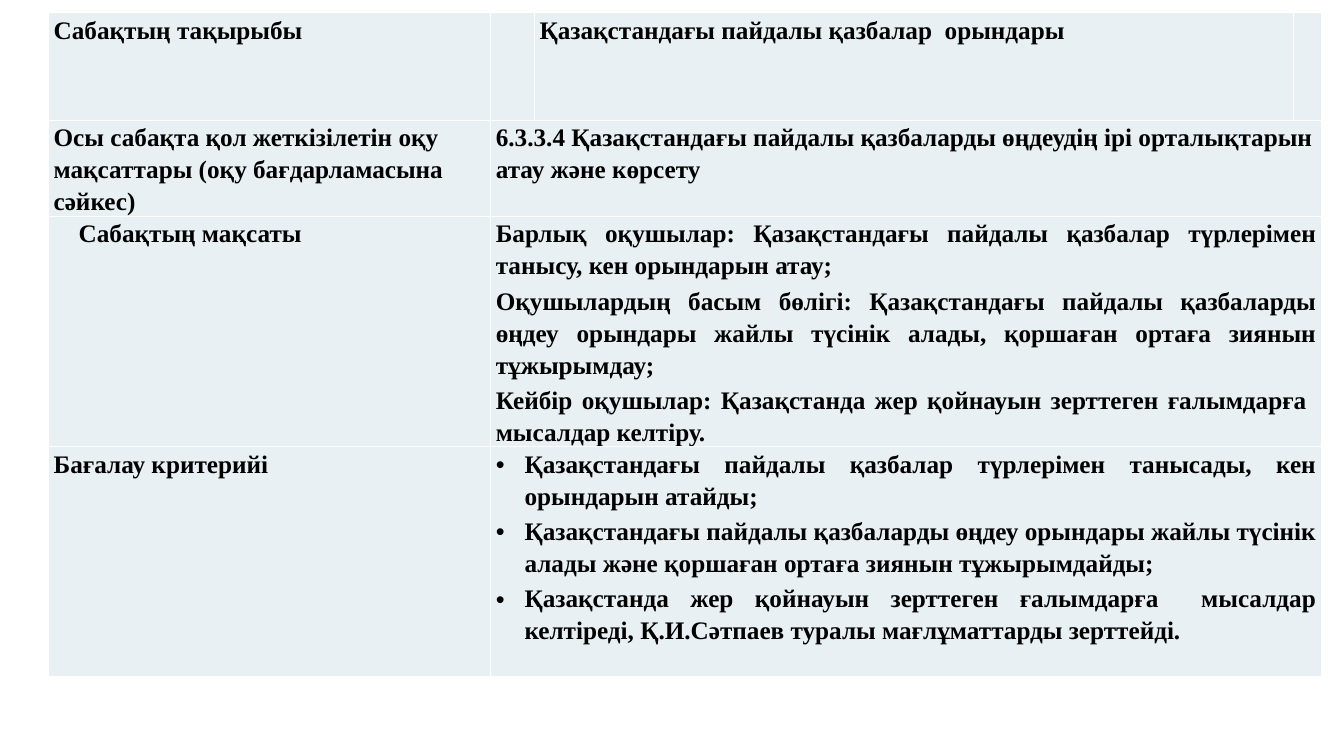
"""Builds a lesson plan slide with a four-row table of topic, goals and criteria."""
from lxml import etree
from pptx import Presentation
from pptx import util as u
from pptx.dml.color import RGBColor
from pptx.enum import text
from pptx.oxml.ns import qn


def color(fmt, value):
    fmt.solid()
    fmt.fore_color.rgb = RGBColor.from_string(value)


def write(cell, lines, before, align, margin, indent, bullet):
    tf = cell.text_frame
    for i, line in enumerate(lines):
        p = tf.add_paragraph() if i else tf.paragraphs[0]
        for name, value in {"alignment": align, "line_spacing": 1.15,
                            "space_before": u.Pt(before)}.items():
            setattr(p, name, value)
        pPr = p._p.get_or_add_pPr()
        pPr.set("marL", str(u.Inches(margin)))
        pPr.set("indent", str(u.Inches(indent)))
        if bullet:
            etree.SubElement(pPr, qn("a:buFont"), typeface="Arial")
            etree.SubElement(pPr, qn("a:buChar"), char="•")
        r = p.add_run()
        r.text = line
        for name, value in {"name": "Times New Roman", "size": u.Pt(24), "bold": True}.items():
            setattr(r.font, name, value)
        color(r.font.fill, "000000")


prs = Presentation()
prs.slide_width, prs.slide_height = u.Inches(17.78), u.Inches(10)
col, row = prs.slide_width / 100, prs.slide_height / 100
s = prs.slides.add_slide(prs.slide_layouts[6])

widths = [32.9, 3.26, 56.47, 2.08]
heights = [14.2, 12.7, 30.5, 30.4]
tbl = s.shapes.add_table(len(heights), len(widths), int(3.6 * col), int(1.7 * row),
                         int(sum(widths) * col), int(sum(heights) * row)).table
for c, width in zip(tbl.columns, widths):
    c.width = int(width * col)
for r, height in zip(tbl.rows, heights):
    r.height = int(height * row)
for i in range(1, len(heights)):
    tbl.cell(i, 1).merge(tbl.cell(i, 3))

for cell in tbl.iter_cells():
    for name, value in {"margin_left": 0.07, "margin_right": 0.07,
                        "margin_top": 0, "margin_bottom": 0}.items():
        setattr(cell, name, u.Inches(value))
    tcPr = cell._tc.get_or_add_tcPr()
    for side in ("lnL", "lnR", "lnT", "lnB"):
        ln = etree.SubElement(tcPr, qn("a:" + side), w=str(u.Pt(1)))
        etree.SubElement(etree.SubElement(ln, qn("a:solidFill")), qn("a:srgbClr"), val="FFFFFF")
    color(cell.fill, "E8F0F4")

left, just = text.PP_ALIGN.LEFT, text.PP_ALIGN.JUSTIFY
contents = [
    (0, 0, ["Сабақтың тақырыбы"], 0, left, 0, 0, False),
    (0, 2, ["Қазақстандағы пайдалы қазбалар  орындары"], 6, left, 0, 0, False),
    (1, 0, ["Осы сабақта қол жеткізілетін оқу мақсаттары (оқу бағдарламасына сәйкес)"],
     2, left, 0, 0, False),
    (1, 1, ["6.3.3.4 Қазақстандағы пайдалы қазбаларды өңдеудің ірі орталықтарын атау және көрсету"],
     3, left, 0, 0, False),
    (2, 0, ["Сабақтың мақсаты"], 2, left, 0, 0.33, False),
    (2, 1, ["Барлық оқушылар: Қазақстандағы пайдалы қазбалар түрлерімен танысу, "
            "кен орындарын атау;",
            "Оқушылардың басым бөлігі: Қазақстандағы пайдалы қазбаларды өңдеу орындары "
            "жайлы түсінік алады, қоршаған ортаға зиянын тұжырымдау;",
            "Кейбір оқушылар: Қазақстанда жер қойнауын зерттеген ғалымдарға  "
            "мысалдар келтіру."], 3, just, 0, 0, False),
    (3, 0, ["Бағалау критерийі"], 2, left, 0, 0, False),
    (3, 1, ["Қазақстандағы пайдалы қазбалар түрлерімен танысады, кен орындарын атайды;",
            "Қазақстандағы пайдалы қазбаларды өңдеу орындары жайлы түсінік алады "
            "және қоршаған ортаға зиянын тұжырымдайды;",
            "Қазақстанда жер қойнауын зерттеген ғалымдарға  мысалдар келтіреді, "
            "Қ.И.Сәтпаев туралы мағлұматтарды зерттейді."], 3, just, 0.38, -0.38, True),
]
for i, j, *content in contents:
    write(tbl.cell(i, j), *content)

prs.save("out.pptx")
